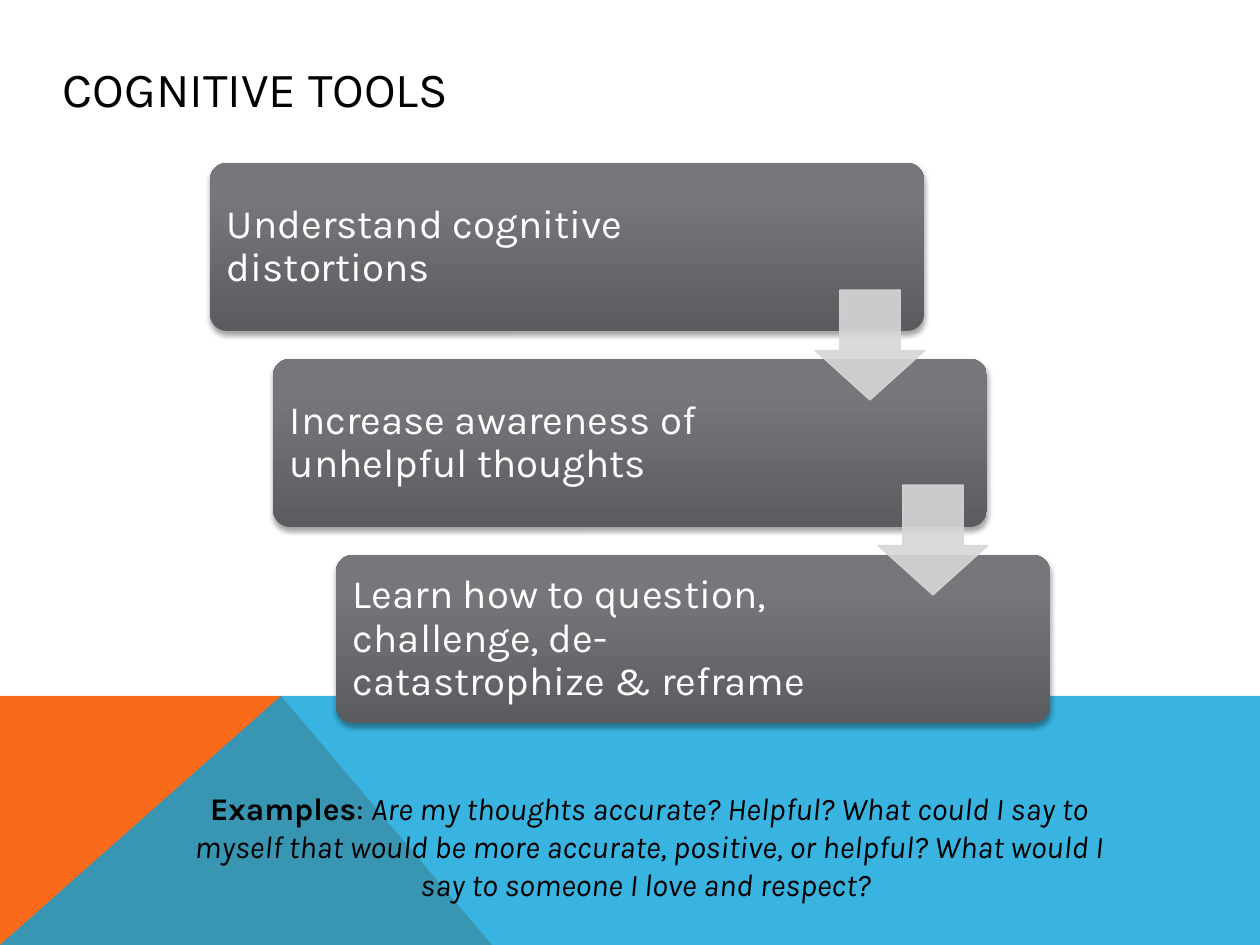
from copy import deepcopy

from lxml.etree import SubElement
from pptx import Presentation
from pptx.dml.color import RGBColor
from pptx.enum.shapes import MSO_SHAPE
from pptx.enum.text import MSO_ANCHOR, PP_ALIGN
from pptx.oxml.ns import qn
from pptx.util import Emu, Pt

SCALE = 914400 / 126


def color(hex_string):
    return RGBColor.from_string(hex_string)


def add_text(box, runs, size, hex_string, anchor, inset=(13, 6)):
    textbox = slide.shapes.add_textbox(*[Emu(int(n * SCALE)) for n in box])
    frame = textbox.text_frame
    frame.word_wrap = True
    frame.vertical_anchor = anchor
    frame.margin_left = frame.margin_right = Emu(int(inset[0] * SCALE))
    frame.margin_top = frame.margin_bottom = Emu(int(inset[1] * SCALE))
    paragraph = frame.paragraphs[0]
    paragraph.font.name = "Karla"
    paragraph.font.size = Pt(size)
    paragraph.font.color.rgb = color(hex_string)
    for text, bold, italic in runs:
        run = paragraph.add_run()
        run.text = text
        run.font.bold = bold
        run.font.italic = italic
    return paragraph


presentation = Presentation()
presentation.slide_width = Emu(int(1260 * SCALE))
presentation.slide_height = Emu(int(945 * SCALE))
slide = presentation.slides.add_slide(presentation.slide_layouts[6])

bands = [
    ([(0, 945), (0, 696), (281, 696), (492, 945)], "F96A1B", 100),
    ([(0, 945), (281, 696), (1260, 696), (1260, 945)], "08A1D9", 80),
]
for points, fill_color, opacity in bands:
    builder = slide.shapes.build_freeform(*points[0], scale=SCALE)
    builder.add_line_segments(points[1:], close=True)
    band = builder.convert_to_shape()
    band.shadow.inherit = False
    band.line.fill.background()
    band.fill.solid()
    band.fill.fore_color.rgb = color(fill_color)
    for node in band._element.spPr.iter(qn("a:srgbClr")):
        SubElement(node, qn("a:alpha"), val=str(opacity * 1000))

steps = [
    "Understand cognitive distortions",
    "Increase awareness of unhelpful thoughts",
    "Learn how to question, challenge, de-catastrophize & reframe",
]
STEP_X, STEP_Y = 63, 196
for index, text in enumerate(steps):
    left, top = 210 + index * STEP_X, 163 + index * STEP_Y
    card = slide.shapes.add_shape(
        MSO_SHAPE.ROUNDED_RECTANGLE,
        *[Emu(int(n * SCALE)) for n in (left, top, 714, 168)])
    card.adjustments[0] = 0.1
    card.line.fill.background()
    card.fill.gradient()
    card.fill.gradient_angle = 90
    properties = card._element.spPr
    stop_list = next(properties.iter(qn("a:gsLst")))
    stop_list.append(deepcopy(stop_list[1]))
    stops = [(0, "5A5C5F"), (0.8, "75777B"), (1, "75787C")]
    for stop, (position, hex_string) in zip(card.fill.gradient_stops, stops):
        stop.position = position
        stop.color.rgb = color(hex_string)
    card.shadow.inherit = False
    shadow = SubElement(
        properties.find(qn("a:effectLst")), qn("a:outerShdw"),
        blurRad=str(Pt(3.1)), dist=str(Pt(1.8)), dir="5400000", rotWithShape="0")
    shadow_color = SubElement(shadow, qn("a:srgbClr"), val="000000")
    SubElement(shadow_color, qn("a:alpha"), val="35000")
    paragraph = add_text((left + 5, top + 5, 532, 158), [(text, None, None)],
                         23, "FFFFFF", MSO_ANCHOR.MIDDLE, (12, 12))
    paragraph.line_spacing = 0.9

for index in range(len(steps) - 1):
    arrow = slide.shapes.add_shape(
        MSO_SHAPE.DOWN_ARROW,
        *[Emu(int(n * SCALE))
          for n in (815 + index * STEP_X, 290 + index * 195, 110, 110)])
    arrow.adjustments[0] = 0.55
    arrow.adjustments[1] = 0.45
    arrow.shadow.inherit = False
    arrow.fill.solid()
    arrow.fill.fore_color.rgb = color("D7D7D8")
    arrow.line.color.rgb = color("D7D7D8")
    arrow.line.width = Pt(0.75)
    for node in arrow._element.spPr.iter(qn("a:srgbClr")):
        SubElement(node, qn("a:alpha"), val="90000")

examples = [
    ("Examples", True, None),
    (": ", None, None),
    ("Are my thoughts accurate? Helpful? What could I say to myself that would "
     "be more accurate, positive, or helpful? What would I say to someone I love "
     "and respect? ", None, True),
]
paragraph = add_text((173, 783, 952, 127), examples, 18, "000000", MSO_ANCHOR.TOP)
paragraph.alignment = PP_ALIGN.CENTER

add_text((50, 50, 1036, 76), [("COGNITIVE TOOLS", None, None)],
         28, "000000", MSO_ANCHOR.MIDDLE)

presentation.save("out.pptx")
